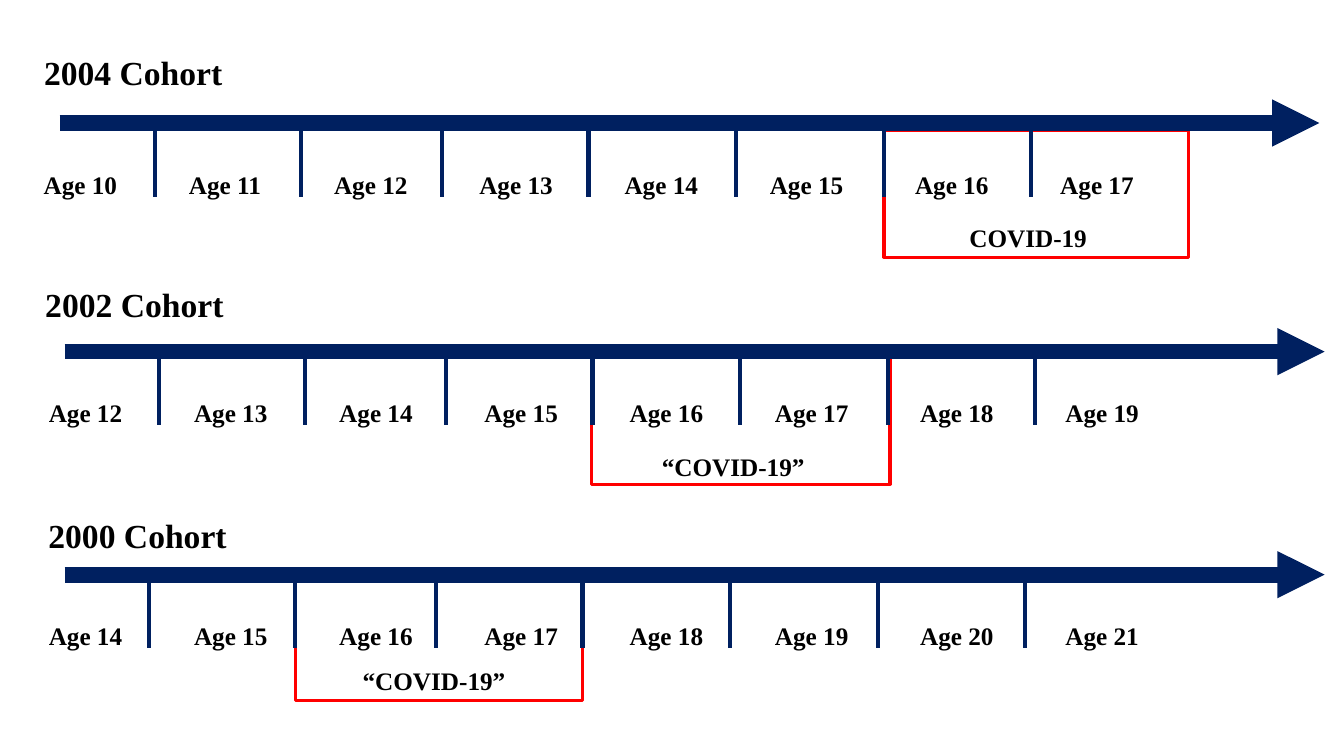
import pptx
import pptx.util
import pptx.dml.color
import pptx.enum.shapes
import pptx.enum.text
import pptx.oxml.ns
import lxml.etree

Cm = pptx.util.Cm
HUES = {"navy": "002060", "red": "FF0000", "white": "FFFFFF", "black": "000000"}
FONT = {"name": "Times New Roman", "bold": True}
TICKS = [0, 3.68, 7.22, 10.92, 14.64, 18.36, 22.07]
COHORTS = [
    {"title": "2004 Cohort", "head": (0.86, 1.19), "axis": (1.5, 3.1), "age": 10, "tick": 3.91,
     "frame": (22.28, 3.3, 7.67, 3.18), "note": "COVID-19", "spot": (24.18, 5.49, 3.56, 1.02)},
    {"title": "2002 Cohort", "head": (0.89, 7.04), "axis": (1.63, 8.86), "age": 12, "tick": 4.01,
     "frame": (14.91, 9.02, 7.52, 3.18), "note": "“COVID-19”", "spot": (16.43, 11.25, 4.34, 1.02)},
    {"title": "2000 Cohort", "head": (0.97, 12.85), "axis": (1.63, 14.48), "age": 14, "tick": 3.76,
     "frame": (7.44, 14.48, 7.24, 3.18), "note": "“COVID-19”", "spot": (8.89, 16.64, 4.22, 1.02)},
]


def hue(name):
    return pptx.dml.color.RGBColor.from_string(HUES[name])


def style(item, form):
    for key, value in form.items():
        setattr(item, key, value)


def add_text(slide, text, box, size=18):
    shape = slide.shapes.add_textbox(*map(Cm, box))
    style(shape.text_frame, {"word_wrap": True,
                             "auto_size": pptx.enum.text.MSO_AUTO_SIZE.SHAPE_TO_FIT_TEXT})
    run = shape.text_frame.paragraphs[0].add_run()
    run.text = text
    style(run.font, {**FONT, "size": pptx.util.Pt(size)})
    run.font.color.rgb = hue("black")


def add_line(slide, start, end, width, arrow=False):
    kind = pptx.enum.shapes.MSO_CONNECTOR.STRAIGHT
    line = slide.shapes.add_connector(kind, *map(Cm, start + end))
    line.line.color.rgb = hue("navy")
    line.line.width = pptx.util.Pt(width)
    name = pptx.oxml.ns.qn
    if arrow:
        tip = lxml.etree.SubElement(line.line._get_or_add_ln(), name("a:tailEnd"))
        tip.set("type", "triangle")
    props = line._element.find(name("p:spPr"))
    lxml.etree.SubElement(props, name("a:effectLst"))


def add_frame(slide, box):
    kind = pptx.enum.shapes.MSO_SHAPE.RECTANGLE
    frame = slide.shapes.add_shape(kind, *map(Cm, box))
    frame.shadow.inherit = False
    frame.fill.solid()
    frame.fill.fore_color.rgb = hue("white")
    frame.line.color.rgb = hue("red")
    frame.line.width = pptx.util.Pt(2.25)


def add_cohort(slide, group):
    left, top = group["axis"]
    add_frame(slide, group["frame"])
    add_line(slide, (left, top), (left + 31.75, top), 11.25, arrow=True)
    for step in range(8):
        add_text(slide, f"Age {group['age'] + step}",
                 (left - 0.65 + 3.66 * step, top + 1.03, 2.49, 1.02))
    for gap in TICKS:
        spot = group["tick"] + gap
        add_line(slide, (spot, top + 0.15), (spot, top + 1.86), 3)
    add_text(slide, group["note"], group["spot"])
    add_text(slide, group["title"], group["head"] + (7.49, 1.27), 24)


def main():
    deck = pptx.Presentation()
    style(deck, {"slide_width": Cm(33.87), "slide_height": Cm(19.05)})
    slide = deck.slides.add_slide(deck.slide_layouts[6])
    for group in COHORTS:
        add_cohort(slide, group)
    deck.save("out.pptx")


if __name__ == "__main__":
    main()
